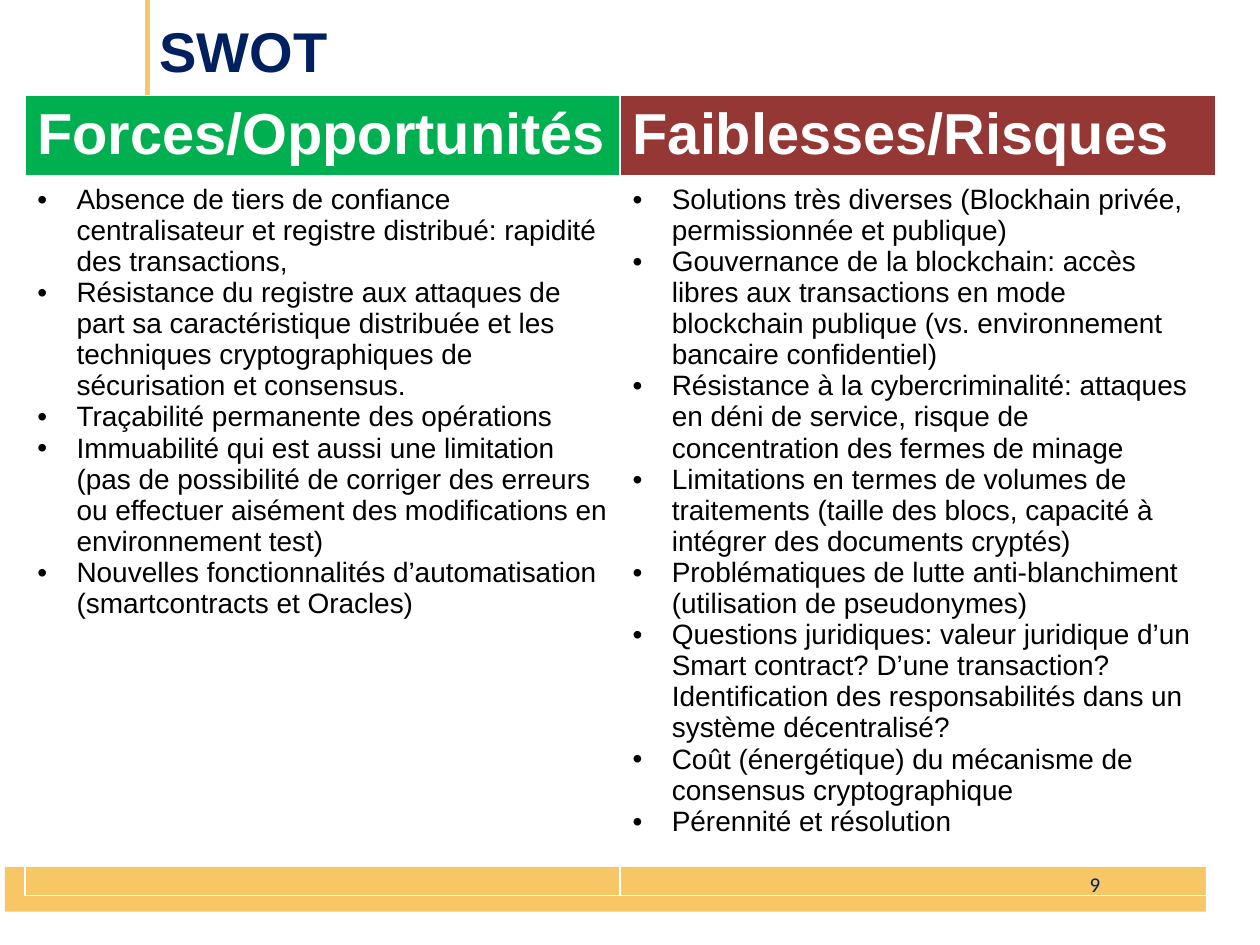
from dataclasses import dataclass

from lxml import etree
from pptx import Presentation
from pptx.dml.color import RGBColor
from pptx.enum.shapes import MSO_CONNECTOR, MSO_SHAPE
from pptx.enum.text import MSO_ANCHOR, PP_ALIGN
from pptx.oxml.ns import qn
from pptx.util import Cm, Pt

RECTANGLE = MSO_SHAPE.RECTANGLE
STRAIGHT = MSO_CONNECTOR.STRAIGHT
MIDDLE = MSO_ANCHOR.MIDDLE
LEFT, RIGHT = PP_ALIGN.LEFT, PP_ALIGN.RIGHT

COLORS = {
    "gold": "F7C765",
    "white": "FFFFFF",
    "navy": "002060",
    "green": "00B050",
    "red": "953735",
    "black": "000000",
}
BULLET_INDENT = Cm(0.79)


@dataclass
class Column:
    heading: str
    color: str
    points: list[str]


@dataclass
class Block:
    left: float
    top: float
    width: float
    height: float
    color: str


@dataclass
class Label:
    text: str
    left: float
    top: float
    width: float
    height: float
    font: str
    size: int
    bold: bool
    align: PP_ALIGN


COLUMNS = [
    Column("Forces/Opportunités", "green", [
        "Absence de tiers de confiance centralisateur et registre distribué: rapidité des transactions,",
        "Résistance du registre aux attaques de part sa caractéristique distribuée et les techniques "
        "cryptographiques de sécurisation et consensus.",
        "Traçabilité permanente des opérations",
        "Immuabilité qui est aussi une limitation (pas de possibilité de corriger des erreurs ou "
        "effectuer aisément des modifications en environnement test)",
        "Nouvelles fonctionnalités d’automatisation (smartcontracts et Oracles)",
    ]),
    Column("Faiblesses/Risques", "red", [
        "Solutions très diverses (Blockhain privée, permissionnée et publique)",
        "Gouvernance de la blockchain: accès libres aux transactions en mode blockchain publique "
        "(vs. environnement bancaire confidentiel)",
        "Résistance à la cybercriminalité: attaques en déni de service, risque de concentration "
        "des fermes de minage",
        "Limitations en termes de volumes de traitements (taille des blocs, capacité à intégrer "
        "des documents cryptés)",
        "Problématiques de lutte anti-blanchiment (utilisation de pseudonymes)",
        "Questions juridiques: valeur juridique d’un Smart contract? D’une transaction? "
        "Identification des responsabilités dans un système décentralisé?",
        "Coût (énergétique) du mécanisme de consensus cryptographique",
        "Pérennité et résolution",
    ]),
]
BLOCKS = [
    Block(0.1, 17.48, 24.79, 0.9, "gold"),  # footer band
    Block(24.31, 17.12, 0.71, 1.68, "white"),  # band end
]
LABELS = [
    Label("SWOT", 2.97, -0.08, 18.39, 2.18, "Arial", 32, True, LEFT),
    Label("9", 16.51, 17.32, 5.92, 1.02, "Calibri", 12, False, RIGHT),
]


def rgb(name: str) -> RGBColor:
    return RGBColor.from_string(COLORS[name])


def style_font(font, name: str, size: int, color: str, bold: bool) -> None:
    font.name = name
    font.size = Pt(size)
    font.bold = bold
    font.color.rgb = rgb(color)


def draw_block(page, block: Block) -> None:
    shape = page.shapes.add_shape(
        RECTANGLE, Cm(block.left), Cm(block.top), Cm(block.width), Cm(block.height))
    shape.shadow.inherit = False
    shape.fill.solid()
    shape.fill.fore_color.rgb = rgb(block.color)
    shape.line.fill.background()


def draw_rule(page) -> None:
    rule = page.shapes.add_connector(STRAIGHT, Cm(2.97), 0, Cm(2.97), Cm(2.13))
    rule.line.color.rgb = rgb("gold")
    rule.line.width = Pt(2.75)
    etree.SubElement(rule._element.spPr, qn("a:effectLst"))


def draw_label(page, label: Label) -> None:
    box = page.shapes.add_textbox(
        Cm(label.left), Cm(label.top), Cm(label.width), Cm(label.height))
    frame = box.text_frame
    frame.word_wrap = True
    frame.vertical_anchor = MIDDLE
    frame.text = label.text
    para = frame.paragraphs[0]
    para.alignment = label.align
    style_font(para.runs[0].font, label.font, label.size, "navy", label.bold)


def set_borders(cell, bottom: int) -> None:
    properties = cell._tc.get_or_add_tcPr()
    widths = {"lnL": 1, "lnR": 1, "lnT": 1, "lnB": bottom}
    for position, (side, width) in enumerate(widths.items()):
        border = etree.Element(qn(f"a:{side}"), w=str(Pt(width)))
        fill = etree.SubElement(border, qn("a:solidFill"))
        etree.SubElement(fill, qn("a:srgbClr"), val=COLORS["white"])
        properties.insert(position, border)


def add_bullet(para) -> None:
    properties = para._p.get_or_add_pPr()
    properties.set("marL", str(BULLET_INDENT))
    properties.set("indent", str(-BULLET_INDENT))
    etree.SubElement(properties, qn("a:buFont"), typeface="Arial")
    etree.SubElement(properties, qn("a:buChar"), char="•")


def fill_column(heading, body, column: Column) -> None:
    heading.fill.solid()
    heading.fill.fore_color.rgb = rgb(column.color)
    set_borders(heading, bottom=3)
    heading.text_frame.text = column.heading
    style_font(heading.text_frame.paragraphs[0].runs[0].font, "Arial", 33, "white", True)

    body.fill.background()
    set_borders(body, bottom=1)
    body.text_frame.text = "\n".join(column.points)
    for para in body.text_frame.paragraphs:
        add_bullet(para)
        style_font(para.runs[0].font, "Arial", 16, "black", False)


def draw_table(page) -> None:
    table = page.shapes.add_table(
        2, len(COLUMNS), Cm(0.5), Cm(1.93), Cm(24), Cm(14.94)).table
    table.horz_banding = False
    table.rows[0].height = Cm(1.5)
    table.rows[1].height = Cm(13.44)
    for index, column in enumerate(COLUMNS):
        fill_column(table.cell(0, index), table.cell(1, index), column)


def main() -> None:
    deck = Presentation()
    deck.slide_width, deck.slide_height = Cm(25.4), Cm(19.05)
    page = deck.slides.add_slide(deck.slide_layouts[6])

    # Frame of the page
    for block in BLOCKS:
        draw_block(page, block)
    draw_rule(page)

    # Title and page number
    for label in LABELS:
        draw_label(page, label)

    # Strengths against weaknesses
    draw_table(page)
    deck.save("out.pptx")


if __name__ == "__main__":
    main()
